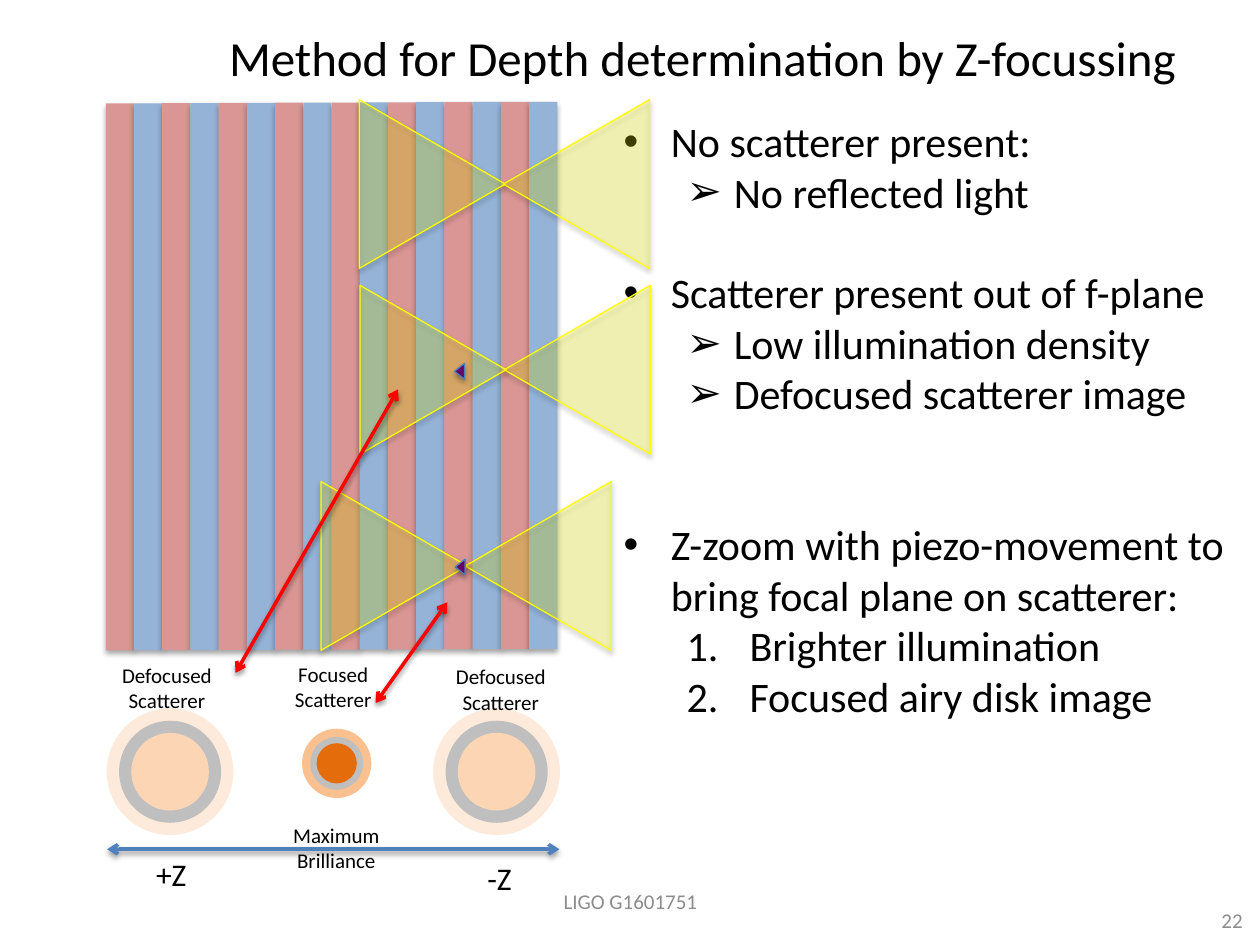
from dataclasses import dataclass

from lxml.etree import SubElement
from pptx import Presentation
from pptx.dml.color import RGBColor
from pptx.enum.shapes import MSO_CONNECTOR as Connector, MSO_SHAPE as Shape
from pptx.enum.text import MSO_ANCHOR as Anchor, PP_ALIGN as Align
from pptx.oxml.ns import qn
from pptx.util import Pt


@dataclass(frozen=True)
class Theme:
    font: str = "Calibri"
    title: int = 28
    body: int = 24
    axis: int = 18
    label: int = 12
    black: str = "000000"
    grey: str = "8C8C8C"
    layers: tuple = ("D99694", "95B3D7")
    beam: str = "FFFF00"
    scatterer: str = "660066"
    scatterer_edge: str = "4B7EBC"
    pointer: str = "FF0000"
    axis_line: str = "4F81BD"
    defocused: tuple = ("FDEADA", "BFBFBF", "FCD5B5")
    focused: tuple = ("FAC090", "BFBFBF", "E46C0A")


class SlideBuilder:
    def __init__(self, page, theme):
        self.page = page
        self.theme = theme

    def shadow(self, item, alpha=35):
        props = item._element.spPr
        for old in props.findall(qn("a:effectLst")):
            props.remove(old)
        effects = SubElement(props, qn("a:effectLst"))
        outer = SubElement(effects, qn("a:outerShdw"), blurRad=str(Pt(3.1)),
                           dist=str(Pt(1.8)), dir="5400000", rotWithShape="0")
        color = SubElement(outer, qn("a:srgbClr"), val="000000")
        SubElement(color, qn("a:alpha"), val=str(alpha * 1000))

    def shape(self, kind, center, size, fill, line=None, alpha=None,
              rotation=0, shadow=True, parent=None):
        (x, y), (width, height) = center, size
        shapes = (parent or self.page).shapes
        item = shapes.add_shape(kind, Pt(x - width / 2), Pt(y - height / 2),
                                Pt(width), Pt(height))
        item.rotation = rotation
        item.fill.solid()
        item.fill.fore_color.rgb = RGBColor.from_string(fill)
        if alpha:
            color = item._element.spPr.find(qn("a:solidFill"))[0]
            SubElement(color, qn("a:alpha"), val=str(alpha * 1000))
        if line:
            item.line.color.rgb = RGBColor.from_string(line)
            item.line.width = Pt(0.75)
        else:
            item.line.fill.background()
        item.shadow.inherit = False
        if shadow:
            self.shadow(item)

    def beam(self, x, y):
        """Two cones of light that meet in the focus x, y."""
        group = self.page.shapes.add_group_shape()
        for side, rotation in ((1, 270), (-1, 90)):
            self.shape(Shape.ISOSCELES_TRIANGLE, (x + side * 41.2, y),
                       (96.5, 83.5), self.theme.beam, self.theme.beam,
                       alpha=24, rotation=rotation, parent=group)

    def scatterer(self, x, y):
        self.shape(Shape.ISOSCELES_TRIANGLE, (x, y), (9, 5.6),
                   self.theme.scatterer, self.theme.scatterer_edge, rotation=270)

    def disk(self, x, y, diameters, colors):
        group = self.page.shapes.add_group_shape()
        for diameter, color in zip(diameters, colors):
            self.shape(Shape.OVAL, (x, y), (diameter, diameter), color,
                       shadow=False, parent=group)

    def arrow(self, start, end, color):
        item = self.page.shapes.add_connector(
            Connector.STRAIGHT, *(Pt(value) for value in (*start, *end)))
        item.line.color.rgb = RGBColor.from_string(color)
        item.line.width = Pt(2)
        line = item.line._get_or_add_ln()
        for tag in ("a:headEnd", "a:tailEnd"):
            SubElement(line, qn(tag), type="arrow")
        self.shadow(item, alpha=38)

    def box(self, left, top, width, height, wrap=False, anchor=Anchor.TOP):
        frame = self.page.shapes.add_textbox(
            Pt(left), Pt(top), Pt(width), Pt(height)).text_frame
        frame.word_wrap = wrap
        frame.vertical_anchor = anchor
        return frame

    def span(self, para, text, size, color):
        span = para.add_run()
        span.text = text
        span.font.name = self.theme.font
        span.font.size = Pt(size)
        span.font.color.rgb = RGBColor.from_string(color)

    def text(self, place, lines, size, color=None, align=Align.LEFT,
             line_breaks=False, **options):
        frame = self.box(*place, **options)
        para = frame.paragraphs[0]
        for index, line in enumerate(lines):
            if index and line_breaks:
                para.add_line_break()
            elif index:
                para = frame.add_paragraph()
            para.alignment = align
            self.span(para, line, size, color or self.theme.black)

    def bullets(self, place, items):
        frame = self.box(*place, wrap=True)
        for index, (mark, text, gap) in enumerate(items):
            para = frame.add_paragraph() if index else frame.paragraphs[0]
            margin, hang = {"•": (27, 27), "➢": (63, 27), "1.": (72, 36)}[mark]
            props = para._p.get_or_add_pPr()
            props.set("marL", str(Pt(margin)))
            props.set("indent", str(-Pt(hang)))
            if mark == "1.":
                SubElement(props, qn("a:buFont"), typeface="+mj-lt")
                SubElement(props, qn("a:buAutoNum"), type="arabicPeriod")
            else:
                SubElement(props, qn("a:buFont"), typeface="Arial")
                SubElement(props, qn("a:buChar"), char=mark)
            para.level = 0 if mark == "•" else 1
            if gap:
                para.space_before = Pt(gap)
            self.span(para, text, self.theme.body, self.theme.black)


def main():
    deck = Presentation()
    deck.slide_width, deck.slide_height = Pt(720), Pt(540)
    theme = Theme()
    slide = SlideBuilder(deck.slides.add_slide(deck.slide_layouts[6]), theme)

    # Layer stack, rising slightly to the right
    for index in range(16):
        slide.shape(Shape.RECTANGLE, (68.5 + 16.13 * index, 215.4 - 0.06 * index),
                    (16.1, 312.6), theme.layers[index % 2])

    # Explanation
    blank_line = 28.8
    slide.bullets((349.2, 62.6, 370.8, 385.2), [
        ("•", "No scatterer present:", 0),
        ("➢", "No reflected light", 0),
        ("•", "Scatterer present out of f-plane", blank_line),
        ("➢", "Low illumination density", 0),
        ("➢", "Defocused scatterer image", 0),
        ("•", "Z-zoom with piezo-movement to bring focal plane on scatterer:",
         2 * blank_line),
        ("1.", "Brighter illumination", 0),
        ("1.", "Focused airy disk image", 0),
    ])

    # Page number
    slide.text((549.4, 511.2, 167.8, 28.8), ["22"], theme.label, theme.grey,
               Align.RIGHT, wrap=True, anchor=Anchor.MIDDLE)

    # Beams and scatterers
    slide.beam(288.2, 105.2)
    slide.beam(288.7, 211.3)
    slide.scatterer(262.6, 212.2)
    slide.beam(266.4, 323.4)
    slide.scatterer(263, 324)

    # Title
    slide.text((123.8, 12.2, 565.2, 41),
               ["Method for Depth determination by Z-focussing"], theme.title)

    # Scatterer images
    large, small = (72.4, 58.3, 44.4), (39.6, 30.2, 23)
    slide.disk(97.2, 441, large, theme.defocused)
    slide.disk(192.4, 436.2, small, theme.focused)
    slide.disk(283.8, 441, large, theme.defocused)

    # Z axis
    slide.arrow((61.2, 485.3), (319.7, 485.3), theme.axis_line)
    slide.text((82.1, 485.3, 32.4, 28.8), ["+Z"], theme.axis)
    slide.text((271.4, 487.4, 28.8, 28.8), ["-Z"], theme.axis)

    # Labels and pointers
    for left, top, width, state in ((61.9, 375.1, 67, "Defocused"),
                                    (252.7, 375.8, 67, "Defocused"),
                                    (159.8, 374.4, 61.2, "Focused")):
        slide.text((left, top, width, 36.7), [state, "Scatterer"],
                   theme.label, align=Align.CENTER)
    slide.arrow((134.6, 384.5), (227.5, 222.5), theme.pointer)
    slide.arrow((214.6, 401.8), (255.6, 344.2), theme.pointer)
    slide.text((159.8, 466.6, 64.8, 36), ["Maximum", "Brilliance"], theme.label,
               align=Align.CENTER, line_breaks=True)

    # Footer
    slide.text((246.2, 500.4, 228.2, 28.8), ["LIGO G1601751"], theme.label,
               theme.grey, Align.CENTER, wrap=True, anchor=Anchor.MIDDLE)

    deck.save("out.pptx")


if __name__ == "__main__":
    main()
